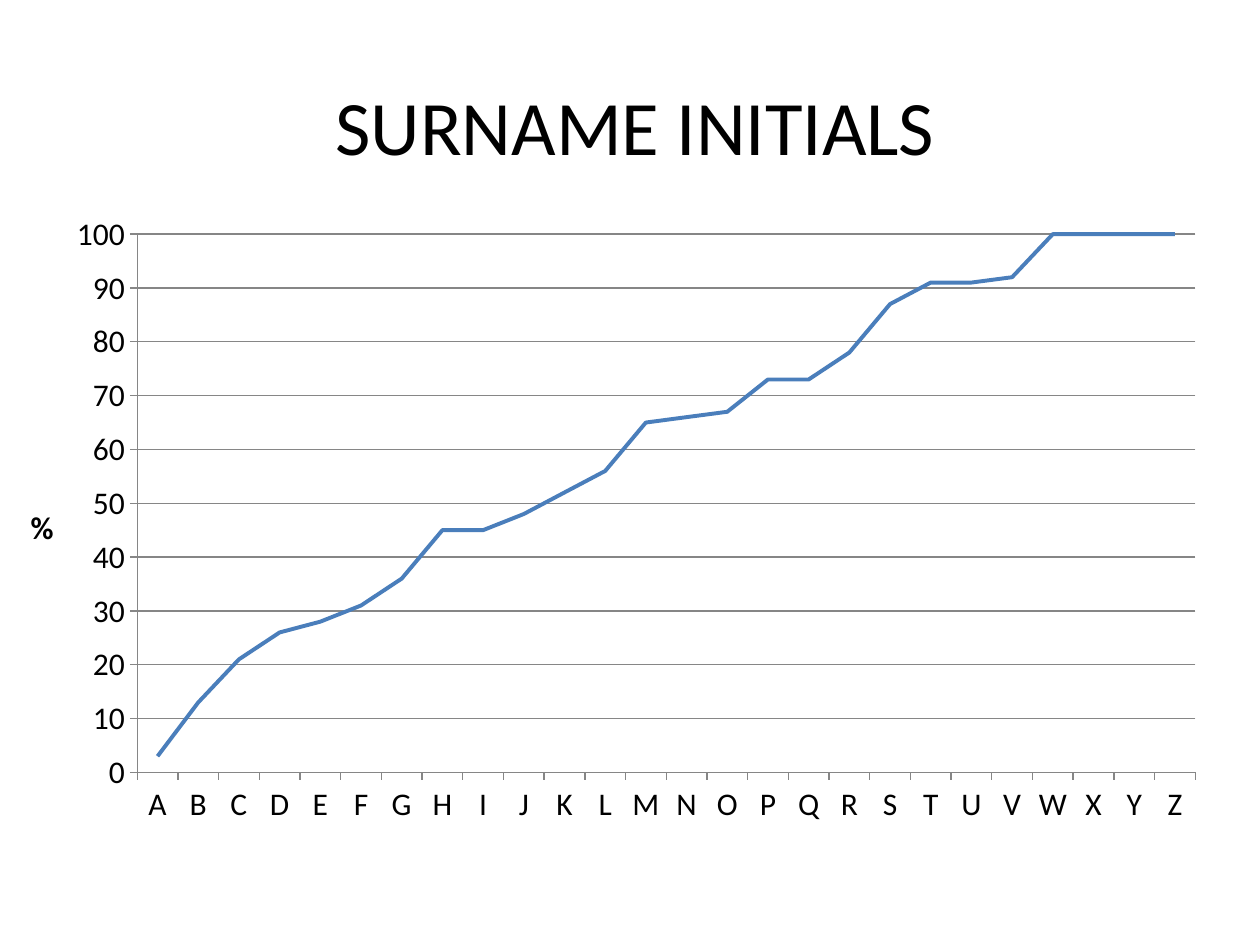
from lxml import etree
from pptx import Presentation
from pptx import util as u
from pptx.chart.data import CategoryChartData
from pptx.dml.color import RGBColor
from pptx.enum import chart as c, text
from pptx.oxml.ns import qn

TITLE = "SURNAME INITIALS"
AXIS_TITLE = "%"
INITIALS = list("ABCDEFGHIJKLMNOPQRSTUVWXYZ")
CUMULATIVE = [3, 13, 21, 26, 28, 31, 36, 45, 45, 48, 52, 56, 65,
              66, 67, 73, 73, 78, 87, 91, 91, 92, 100, 100, 100, 100]

FONT = "Calibri"
BLACK = RGBColor(0x00, 0x00, 0x00)
GREY = RGBColor(0x86, 0x86, 0x86)
BLUE = RGBColor(0x4A, 0x7E, 0xBB)

PX = 914400 // 126
TITLE_BOX = (105, 45, 1061, 159)
CHART_BOX = (25, 116, 1181, 753)
PLOT = {"layoutTarget": "inner", "xMode": "edge", "yMode": "edge",
        "x": 0.095, "y": 0.157, "w": 0.896, "h": 0.715}
AXIS_TITLE_AT = {"xMode": "edge", "yMode": "edge", "x": 0, "y": 0.51}


def px(box):
    return [n * PX for n in box]


def set_font(font, size, bold=False):
    font.name, font.size, font.bold = FONT, u.Pt(size), bold
    font.color.rgb = BLACK


def set_line(line, color, width):
    line.color.rgb = color
    line.width = u.Pt(width)


def set_layout(parent, index, values):
    for old in parent.findall(qn("c:layout")):
        parent.remove(old)
    layout = etree.Element(qn("c:layout"))
    manual = etree.SubElement(layout, qn("c:manualLayout"))
    for tag, value in values.items():
        etree.SubElement(manual, qn("c:" + tag)).set("val", str(value))
    parent.insert(index, layout)


def add_title(s):
    sp = s.shapes.title
    sp.left, sp.top, sp.width, sp.height = px(TITLE_BOX)
    tf = sp.text_frame
    tf.text = TITLE
    tf.vertical_anchor = text.MSO_ANCHOR.MIDDLE
    p = tf.paragraphs[0]
    p.alignment = text.PP_ALIGN.CENTER
    set_font(p.font, 44)


def add_line_chart(s):
    data = CategoryChartData()
    data.categories = INITIALS
    data.add_series("Series 1", CUMULATIVE)
    chart = s.shapes.add_chart(c.XL_CHART_TYPE.LINE, *px(CHART_BOX), data).chart
    set_font(chart.font, 18)
    chart.has_legend = chart.has_title = False

    line = chart.plots[0].series[0]
    line.smooth = False
    line.marker.style = c.XL_MARKER_STYLE.NONE
    set_line(line.format.line, BLUE, 2.25)

    values = chart.value_axis
    for axis in (chart.category_axis, values):
        axis.major_tick_mark = c.XL_TICK_MARK.OUTSIDE
        set_line(axis.format.line, GREY, 0.75)
    values.minimum_scale, values.maximum_scale, values.major_unit = 0, 100, 10
    values.has_major_gridlines = True
    set_line(values.major_gridlines.format.line, GREY, 0.75)

    title = values.axis_title
    tf = title.text_frame
    tf.text = AXIS_TITLE
    set_font(tf.paragraphs[0].font, 18, True)
    body = title._element.find(".//" + qn("a:bodyPr"))
    body.set("rot", "0")
    body.set("vert", "horz")
    set_layout(title._element, 1, AXIS_TITLE_AT)
    set_layout(chart.plots[0]._element.getparent(), 0, PLOT)


def main():
    prs = Presentation()
    prs.slide_width, prs.slide_height = u.Inches(10), u.Inches(7.5)
    s = prs.slides.add_slide(prs.slide_layouts[5])
    add_title(s)
    add_line_chart(s)
    prs.save("out.pptx")


if __name__ == "__main__":
    main()
